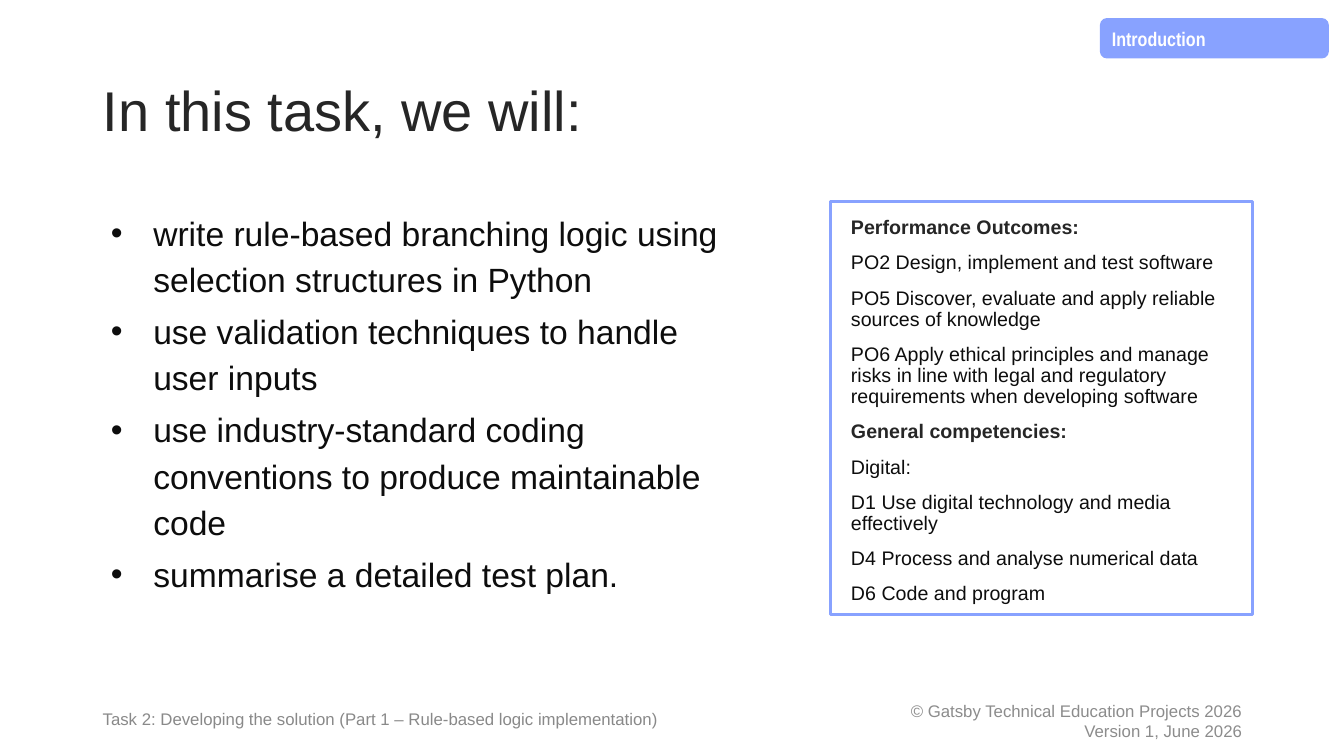
from lxml import etree
from pptx import Presentation
from pptx import util as u
from pptx.dml.color import RGBColor
from pptx.enum import shapes, text
from pptx.oxml import ns

BLUE = RGBColor(0x88, 0xA2, 0xFF)
WHITE = RGBColor(0xFF, 0xFF, 0xFF)
DARK = RGBColor(0x26, 0x26, 0x26)
INK = RGBColor(0x0D, 0x0D, 0x0D)
GREY = RGBColor(0x8C, 0x8C, 0x8C)
ASH = RGBColor(0x89, 0x89, 0x89)

LEFT = text.PP_ALIGN.LEFT
RIGHT = text.PP_ALIGN.RIGHT
TOP = text.MSO_ANCHOR.TOP
MID = text.MSO_ANCHOR.MIDDLE

GOALS = [
    "write rule-based branching logic using selection structures in Python",
    "use validation techniques to handle user inputs",
    "use industry-standard coding conventions to produce maintainable code",
    "summarise a detailed test plan.",
]
SKILLS = {
    "Performance Outcomes:": [
        "PO2 Design, implement and test software",
        "PO5 Discover, evaluate and apply reliable sources of knowledge",
        "PO6 Apply ethical principles and manage risks in line with legal "
        "and regulatory requirements when developing software",
    ],
    "General competencies:": [
        "Digital:",
        "D1 Use digital technology and media effectively",
        "D4 Process and analyse numerical data",
        "D6 Code and program",
    ],
}


class Deck:
    def __init__(self):
        self.prs = Presentation()
        self.prs.slide_width = u.Inches(13.33)
        self.prs.slide_height = u.Inches(7.5)
        self.slide = self.prs.slides.add_slide(self.prs.slide_layouts[1])

    def place(self, item, box):
        for name, size in zip(("left", "top", "width", "height"), box):
            setattr(item, name, u.Inches(size))

    def frame(self, item, anchor=TOP, pad=(0.1, 0.05)):
        frame = item.text_frame
        side, edge = (u.Inches(size) for size in pad)
        form = {
            "word_wrap": True,
            "auto_size": text.MSO_AUTO_SIZE.NONE,
            "vertical_anchor": anchor,
            "margin_left": side,
            "margin_right": side,
            "margin_top": edge,
            "margin_bottom": edge,
        }
        for name, value in form.items():
            setattr(frame, name, value)
        return frame

    def fill(self, frame, lines, size, color, face="Arial", bold=False,
             align=LEFT, pitch=1.0, gap=0, dot=False):
        for line in lines:
            first = not frame.text
            para = frame.paragraphs[0] if first else frame.add_paragraph()
            para.text = line
            if dot:
                self.mark(para, color)
            form = {
                "alignment": align,
                "line_spacing": pitch,
                "space_before": u.Pt(0 if first else gap),
            }
            for name, value in form.items():
                setattr(para, name, value)
            font = para.runs[0].font
            for name, value in {"name": face, "size": u.Pt(size), "bold": bold}.items():
                setattr(font, name, value)
            font.color.rgb = color

    def mark(self, para, color):
        props = para._p.get_or_add_pPr()
        props.set("marL", str(u.Inches(0.5)))
        props.set("indent", str(u.Inches(-0.42)))
        tint = etree.SubElement(props, ns.qn("a:buClr"))
        etree.SubElement(tint, ns.qn("a:srgbClr"), val=str(color))
        etree.SubElement(props, ns.qn("a:buFont"), typeface="Arial")
        etree.SubElement(props, ns.qn("a:buChar"), char="•")

    def title(self, line, box):
        item = self.slide.shapes.title
        self.place(item, box)
        self.fill(self.frame(item, MID), [line], 40, DARK, pitch=0.9)

    def list(self, lines, box):
        item = self.slide.placeholders[1]
        self.place(item, box)
        self.fill(self.frame(item), lines, 24, INK, pitch=1.15, gap=4, dot=True)

    def shape(self, kind, box, fill, line=None):
        item = self.slide.shapes.add_shape(kind, *map(u.Inches, box))
        item.shadow.inherit = False
        item.fill.solid()
        item.fill.fore_color.rgb = fill
        if line is None:
            item.line.fill.background()
        else:
            item.line.color.rgb = line
            item.line.width = u.Pt(2.25)
        return item

    def tag(self, line, box):
        item = self.shape(shapes.MSO_SHAPE.FLOWCHART_ALTERNATE_PROCESS, box, BLUE)
        self.fill(self.frame(item), [line], 14, WHITE, face="Arial Narrow",
                  bold=True, pitch=1.08)

    def panel(self, groups, box):
        item = self.shape(shapes.MSO_SHAPE.RECTANGLE, box, WHITE, BLUE)
        frame = self.frame(item, pad=(0.2, 0.16))
        for head, lines in groups.items():
            self.fill(frame, [head], 14, DARK, bold=True, pitch=0.9, gap=10)
            self.fill(frame, lines, 14, INK, pitch=0.9, gap=10)

    def note(self, lines, box, color, **form):
        item = self.slide.shapes.add_textbox(*map(u.Inches, box))
        self.fill(self.frame(item, MID), lines, 12, color, **form)


def main():
    deck = Deck()
    deck.note(["© Gatsby Technical Education Projects 2026", "Version 1, June 2026"],
              (7.92, 6.95, 4.5, 0.4), GREY, align=RIGHT)
    deck.tag("Introduction", (10.91, 0.18, 2.27, 0.4))
    deck.title("In this task, we will:", (0.92, 0.4, 11.5, 1.45))
    deck.list(GOALS, (0.92, 2, 6.43, 4.76))
    deck.panel(SKILLS, (8.24, 2, 4.18, 4.1))
    deck.note(["Task 2: Developing the solution (Part 1 – Rule-based logic implementation)"],
              (0.92, 6.95, 6.26, 0.34), ASH, pitch=1.08)
    deck.prs.save("out.pptx")


if __name__ == "__main__":
    main()
